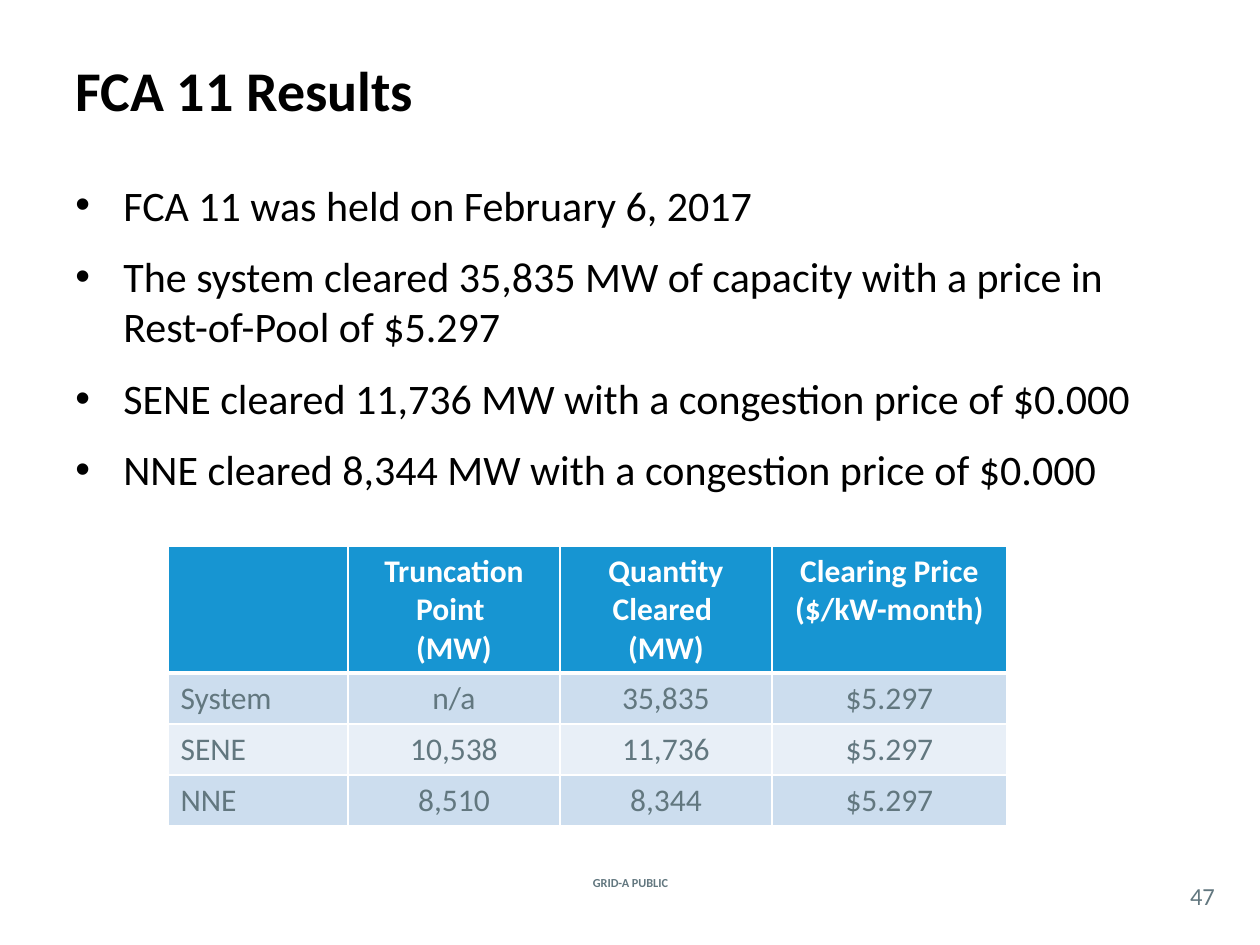
from dataclasses import dataclass
from lxml.etree import SubElement as Sub
from pptx import Presentation
from pptx.dml.color import RGBColor as Rgb
from pptx.enum.text import MSO_ANCHOR as Anchor, PP_ALIGN as Align
from pptx.oxml.ns import qn
from pptx.util import Emu, Pt


@dataclass(frozen=True)
class Theme:
    face: str = "Calibri"
    black: str = "000000"
    white: str = "FFFFFF"
    slate: str = "62777F"
    blue: str = "1795D2"
    bands: tuple = ("CCDDEE", "E8EFF7")
    title: int = 32
    body: int = 24
    cell: int = 18
    page: int = 14
    foot: int = 7


THEME = Theme()
SCALE = 914400 / 126

POINTS = [
    "FCA 11 was held on February 6, 2017",
    "The system cleared 35,835 MW of capacity with a price in Rest-of-Pool of $5.297",
    "SENE cleared 11,736 MW with a congestion price of $0.000",
    "NNE cleared 8,344 MW with a congestion price of $0.000",
]
RESULTS = [
    ["", "Truncation Point \v(MW)", "Quantity Cleared \v(MW)", "Clearing Price ($/kW-month)"],
    ["System", "n/a", "35,835", "$5.297"],
    ["SENE", "10,538", "11,736", "$5.297"],
    ["NNE", "8,510", "8,344", "$5.297"],
]
WIDTHS = [180, 212, 212, 235]
HEIGHTS = [127, 51, 51, 51]


def px(n):
    return Emu(round(n * SCALE))


def style(para, size, color, bold=False, align=Align.LEFT):
    para.alignment = align
    font = para.font
    font.name, font.size, font.bold = THEME.face, Pt(size), bold
    font.color.rgb = Rgb.from_string(color)


def add_box(slide, area, anchor=Anchor.MIDDLE, inset=True):
    frame = slide.shapes.add_textbox(*map(px, area)).text_frame
    frame.word_wrap = True
    frame.vertical_anchor = anchor
    if not inset:
        frame.margin_left = frame.margin_right = 0
        frame.margin_top = frame.margin_bottom = 0
    return frame


def add_label(slide, area, text, size, color, bold=False, align=Align.LEFT, inset=True):
    para = add_box(slide, area, inset=inset).paragraphs[0]
    para.text = text
    style(para, size, color, bold, align)


def add_list(slide, area, items):
    frame = add_box(slide, area, Anchor.TOP)
    for i, item in enumerate(items):
        para = frame.add_paragraph() if i else frame.paragraphs[0]
        para.text = item
        if i:
            para.space_before = Pt(12)
        props = para._p.get_or_add_pPr()
        props.set("marL", str(px(48)))
        props.set("indent", str(-px(48)))
        Sub(props, qn("a:buFont"), typeface="Arial")
        Sub(props, qn("a:buChar"), char="•")
        style(para, THEME.body, THEME.black)


def add_edges(cell, widths):
    props = cell._tc.get_or_add_tcPr()
    for side, width in widths.items():
        line = Sub(props, qn(f"a:ln{side}"), w=str(Pt(width)))
        fill = Sub(line, qn("a:solidFill"))
        Sub(fill, qn("a:srgbClr"), val=THEME.white)


def add_grid(slide, left, top):
    size = (sum(WIDTHS), sum(HEIGHTS))
    shape = slide.shapes.add_table(len(RESULTS), len(WIDTHS), *map(px, (left, top, *size)))
    table = shape.table
    for col, width in zip(table.columns, WIDTHS):
        col.width = px(width)
    for r, row in enumerate(RESULTS):
        table.rows[r].height = px(HEIGHTS[r])
        head = r == 0
        fill = THEME.blue if head else THEME.bands[(r - 1) % 2]
        color = THEME.white if head else THEME.slate
        for c, text in enumerate(row):
            cell = table.cell(r, c)
            add_edges(cell, {"L": 1, "R": 1, "T": 3 if r == 1 else 1, "B": 3 if head else 1})
            cell.fill.solid()
            cell.fill.fore_color.rgb = Rgb.from_string(fill)
            para = cell.text_frame.paragraphs[0]
            para.text = text
            style(para, THEME.cell, color, head, Align.CENTER if c else Align.LEFT)


def main():
    deck = Presentation()
    deck.slide_width, deck.slide_height = px(1260), px(945)
    slide = deck.slides.add_slide(deck.slide_layouts[6])
    add_label(slide, (538, 872, 185, 21), "GRID-A PUBLIC", THEME.foot, THEME.slate, True, Align.CENTER)
    add_label(slide, (1176, 877, 53, 37), "47", THEME.page, THEME.slate, align=Align.CENTER, inset=False)
    add_label(slide, (63, 10, 1134, 158), "FCA 11 Results", THEME.title, THEME.black, True)
    add_list(slide, (63, 173, 1134, 709), POINTS)
    add_grid(slide, 168, 546)
    deck.save("out.pptx")


if __name__ == "__main__":
    main()
